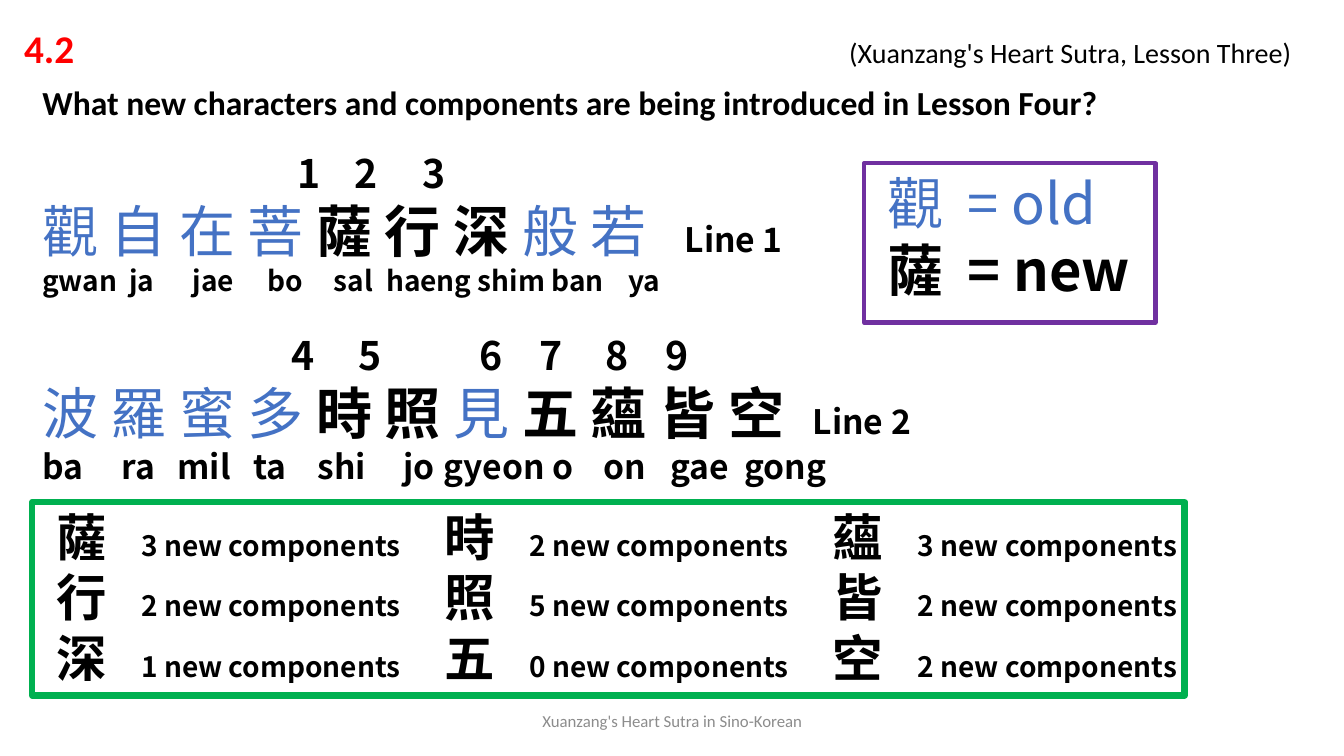
from pptx import Presentation, util as u
from pptx.dml.color import RGBColor
from pptx.enum import shapes, text
from pptx.oxml import ns
from lxml import etree

BLACK = RGBColor(0, 0, 0)
RED = RGBColor(0xFF, 0, 0)
GRAY = RGBColor(0x8C, 0x8C, 0x8C)
OLD_BLUE = RGBColor(0x44, 0x72, 0xC4)
PURPLE = RGBColor(0x70, 0x30, 0xA0)
GREEN = RGBColor(0, 0xB0, 0x50)
LATIN, HAN = "Calibri", "Noto Sans CJK SC"
LINE_RATIO = 1.2

VERSE_LINES = [
    dict(numbers="123", number_stops=[2.53, 3.10, 3.77],
         characters=[("觀 自 在 菩 ", False), ("薩 行 深 ", True), ("般 若", False)],
         label="Line 1", label_stop=6.37, size=20,
         syllables="gwan ja jae bo sal haeng shim ban ya",
         syllable_stops=[0.86, 1.49, 2.23, 2.89, 3.41, 4.32, 5.05, 5.81]),
    dict(numbers="456789", number_stops=[2.47, 3.14, 4.34, 4.93, 5.59, 6.18],
         characters=[("波 羅 蜜 多 ", False), ("時 照 ", True), ("見", False),
                     (" 五 蘊 皆 空", True)],
         label="Line 2", label_stop=7.64, size=24,
         syllables="ba ra mil ta shi jo gyeon o on gae gong",
         syllable_stops=[0.79, 1.34, 2.09, 2.73, 3.58, 3.98, 5.06, 5.57, 6.23, 6.96]),
]
COMPONENT_COUNTS = [
    [("薩", 3), ("行", 2), ("深", 1)],
    [("時", 2), ("照", 5), ("五", 0)],
    [("蘊", 3), ("皆", 2), ("空", 2)],
]


def style(font, size, color=BLACK, bold=False, name=HAN):
    font.size, font.bold, font.name = u.Pt(size), bold, name
    font.color.rgb = color


def set_tabs(paragraph, stops, align="l"):
    tabs = etree.Element(ns.qn("a:tabLst"))
    for stop in stops:
        etree.SubElement(tabs, ns.qn("a:tab"), pos=str(u.Inches(stop)), algn=align)
    properties = paragraph._p.get_or_add_pPr()
    defaults = properties.find(ns.qn("a:defRPr"))
    if defaults is None:
        properties.append(tabs)
    else:
        defaults.addprevious(tabs)


def add_frame(slide, left, top, width, height):
    box = slide.shapes.add_textbox(*map(u.Inches, (left, top, width, height)))
    frame = box.text_frame
    frame.word_wrap = True
    frame.margin_left = frame.margin_right = frame.margin_top = frame.margin_bottom = 0
    return frame


def fill_line(paragraph, runs, stops=(), height=None):
    for words, size, color, bold in runs:
        run = paragraph.add_run()
        run.text = words
        style(run.font, size, color, bold)
    if height:
        paragraph.line_spacing = u.Pt(height * LINE_RATIO)
    set_tabs(paragraph, stops)


def add_outline(slide, left, top, width, height, color, weight):
    shape = slide.shapes.add_shape(shapes.MSO_SHAPE.RECTANGLE,
                                   *map(u.Inches, (left, top, width, height)))
    shape.shadow.inherit = False
    shape.fill.background()
    shape.line.color.rgb = color
    shape.line.width = u.Pt(weight)


def add_header(slide, left, top, width, height):
    paragraph = add_frame(slide, left, top, width, height).paragraphs[0]
    for words, size, color, bold in [("4.2", 28, RED, True),
                                     ("\t(Xuanzang's Heart Sutra, Lesson Three)", 20, BLACK, False)]:
        run = paragraph.add_run()
        run.text = words
        style(run.font, size, color, bold, LATIN)
    set_tabs(paragraph, [width], "r")


def add_question(slide, left, top, width, height):
    title = slide.shapes.title
    title.left, title.top, title.width, title.height = map(u.Inches, (left, top, width, height))
    frame = title.text_frame
    frame.margin_left = frame.margin_right = frame.margin_top = frame.margin_bottom = 0
    frame.vertical_anchor = text.MSO_ANCHOR.TOP
    frame.text = "What new characters and components are being introduced in Lesson Four?"
    paragraph = frame.paragraphs[0]
    paragraph.alignment = text.PP_ALIGN.LEFT
    style(paragraph.font, 24, bold=True, name=LATIN)


def add_verse(slide, left, top, width, height, verse):
    frame = add_frame(slide, left, top, width, height)
    numbers = "".join("\t" + number for number in verse["numbers"])
    fill_line(frame.paragraphs[0], [(numbers, 28, BLACK, True)], verse["number_stops"], 28)
    characters = [(words, 40, BLACK if new else OLD_BLUE, new)
                  for words, new in verse["characters"]]
    fill_line(frame.add_paragraph(), characters + [("\t" + verse["label"], 24, BLACK, True)],
              [verse["label_stop"]], 40)
    syllables = verse["syllables"].replace(" ", "\t")
    fill_line(frame.add_paragraph(), [(syllables, verse["size"], BLACK, True)],
              verse["syllable_stops"], verse["size"])


def add_legend(slide, left, top, width, height):
    frame = add_frame(slide, left + 0.23, top + 0.05, width - 0.23, height - 0.05)
    fill_line(frame.paragraphs[0], [("觀\t= old", 40, OLD_BLUE, False)], [0.8], 40)
    fill_line(frame.add_paragraph(), [("薩\t= new", 40, BLACK, True)], [0.8], 40)
    add_outline(slide, left, top, width, height, PURPLE, 3)


def add_components(slide, left, top, width, height):
    pitch = 3.85
    for column, entries in enumerate(COMPONENT_COUNTS):
        frame = add_frame(slide, left + 0.24 + column * pitch, top + 0.04, pitch, height - 0.04)
        for row, (character, count) in enumerate(entries):
            paragraph = frame.add_paragraph() if row else frame.paragraphs[0]
            fill_line(paragraph, [(character, 36, BLACK, True),
                                  (f"\t{count} new components", 20, BLACK, True)], [0.84], 36)
    add_outline(slide, left, top, width, height, GREEN, 4.5)


def add_footer(slide, left, top, width, height):
    frame = add_frame(slide, left, top, width, height)
    frame.vertical_anchor = text.MSO_ANCHOR.MIDDLE
    frame.text = "Xuanzang's Heart Sutra in Sino-Korean"
    paragraph = frame.paragraphs[0]
    paragraph.alignment = text.PP_ALIGN.CENTER
    style(paragraph.font, 12, GRAY, name=LATIN)


def main():
    presentation = Presentation()
    presentation.slide_width, presentation.slide_height = u.Inches(13.33), u.Inches(7.5)
    slide = presentation.slides.add_slide(presentation.slide_layouts[5])
    add_header(slide, 0.24, 0.24, 12.57, 0.5)
    add_question(slide, 0.42, 0.81, 11.4, 0.42)
    for index, verse in enumerate(VERSE_LINES):
        add_verse(slide, 0.42, 1.48 + index * 1.81, 9.5 if index else 8, 1.6, verse)
    add_legend(slide, 8.57, 1.62, 2.89, 1.58)
    add_components(slide, 0.32, 4.98, 11.43, 1.92)
    add_footer(slide, 4.42, 6.95, 4.5, 0.4)
    presentation.save("out.pptx")


if __name__ == "__main__":
    main()
